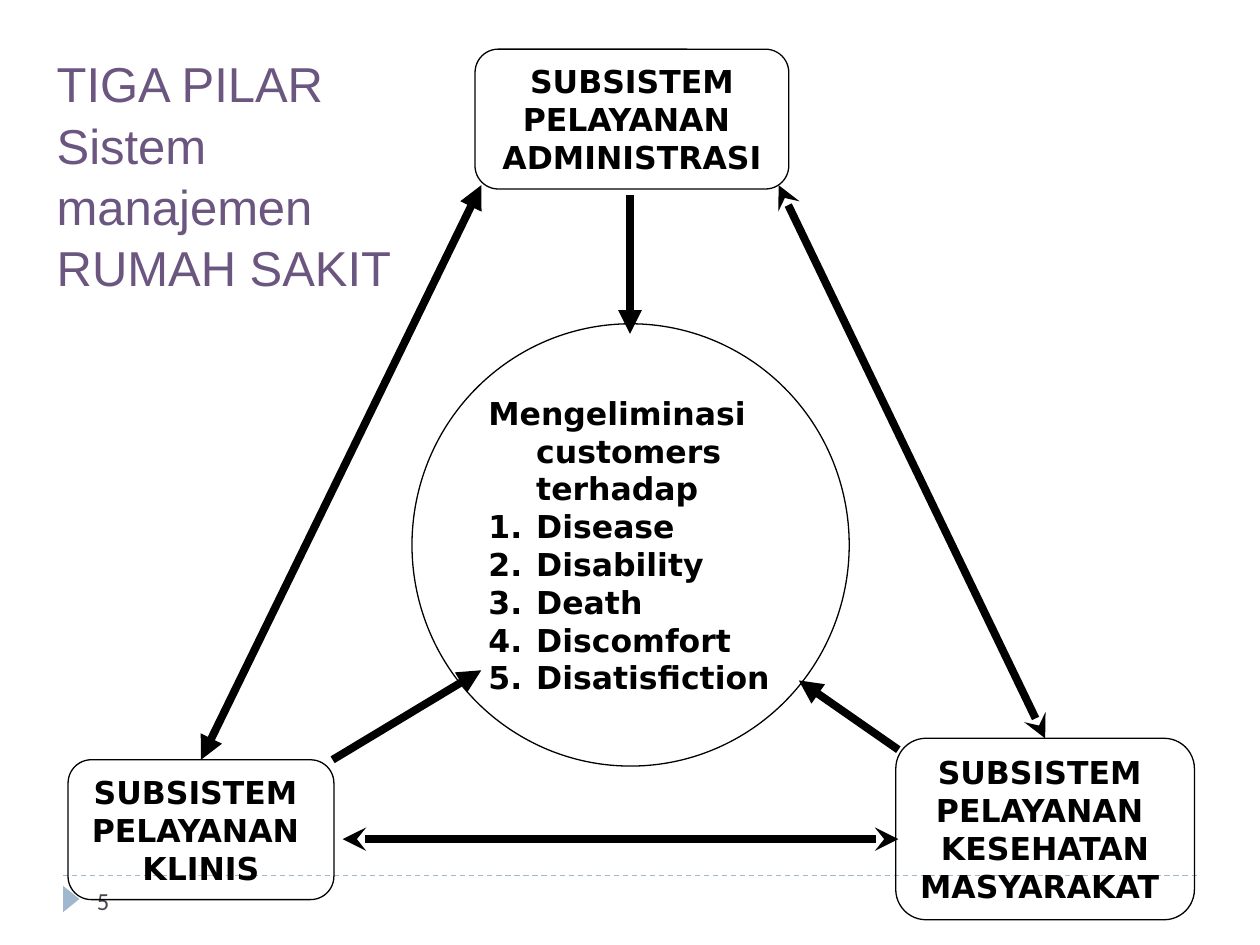
from lxml import etree
from pptx import Presentation
from pptx.dml.color import RGBColor
from pptx.enum import dml, shapes, text
from pptx.oxml import ns
from pptx.util import Inches, Pt

BLACK, PURPLE, BLUE, GREY = "000000", "6B5680", "9FB8CD", "464653"
BOLD = {"name": "DejaVu Sans", "size": Pt(18), "bold": True}
TOP, LEFT = 0, 1  # connection sites of a rectangle


def paint(color_format, color):
    color_format.rgb = RGBColor.from_string(color)


def add_xml(parent, tag, **attributes):
    return etree.SubElement(parent, ns.qn(tag), attributes)


def write(shape, paragraphs, font, color, align=text.PP_ALIGN.LEFT,
          anchor=text.MSO_ANCHOR.MIDDLE):
    """Fill a shape with paragraphs; \\v marks a line break."""
    frame = shape.text_frame
    frame.text = "\n".join(paragraphs)
    frame.word_wrap = False
    frame.auto_size = text.MSO_AUTO_SIZE.NONE
    frame.vertical_anchor = anchor
    for paragraph in frame.paragraphs:
        paragraph.alignment = align
        for name, value in font.items():
            setattr(paragraph.font, name, value)
        paint(paragraph.font.color, color)
    return frame


def add_outline(slide, kind, box):
    shape = slide.shapes.add_shape(kind, *map(Inches, box))
    shape.shadow.inherit = False
    shape.fill.background()
    paint(shape.line.color, BLACK)
    shape.line.width = Pt(0.75)
    return shape


def add_line(slide, start, end, color=BLACK, width=4.5, head=None, tail=None):
    line = slide.shapes.add_connector(
        shapes.MSO_CONNECTOR.STRAIGHT, *map(Inches, (*start, *end)))
    paint(line.line.color, color)
    line.line.width = Pt(width)
    outline = line.line._get_or_add_ln()
    for tag, arrow in (("a:headEnd", head), ("a:tailEnd", tail)):
        if arrow:
            add_xml(outline, tag, type=arrow)
    add_xml(line._element.spPr, "a:effectLst")
    return line


def add_title(slide, box):
    title = slide.shapes.title
    title.left, title.top, title.width, title.height = map(Inches, box)
    lines = ["TIGA PILAR", "Sistem", "manajemen", "RUMAH SAKIT"]
    frame = write(title, lines, {"name": "Arial", "size": Pt(28)}, PURPLE,
                  anchor=text.MSO_ANCHOR.TOP)
    for paragraph in frame.paragraphs:
        paragraph.line_spacing = 1.04


def add_footer(slide, box):
    left, top, width, height = box
    # Dashed rule
    rule = add_line(slide, (left, top), (left + width, top), BLUE, 0.75)
    rule.line.dash_style = dml.MSO_LINE.DASH
    # Page marker
    marker = slide.shapes.add_shape(
        shapes.MSO_SHAPE.ISOSCELES_TRIANGLE,
        Inches(left - 0.04), Inches(top + 0.12), Inches(0.21), Inches(0.13))
    marker.rotation = 90
    marker.shadow.inherit = False
    marker.fill.solid()
    paint(marker.fill.fore_color, BLUE)
    marker.line.fill.background()
    # Page number
    number = slide.shapes.add_textbox(
        Inches(left + 0.17), Inches(top), Inches(2.17), Inches(height))
    write(number, ["5"], {"name": "Calibri", "size": Pt(14)}, GREY)


def add_goal(slide, box):
    circle = add_outline(slide, shapes.MSO_SHAPE.OVAL, box)
    goals = ["Disease", "Disability", "Death", "Discomfort", "Disatisfiction"]
    frame = write(circle, ["Mengeliminasi \vcustomers \vterhadap", *goals],
                  BOLD, BLACK)
    indent = Inches(0.38)
    for index, paragraph in enumerate(frame.paragraphs):
        properties = paragraph._p.get_or_add_pPr()
        properties.set("marL", str(indent))
        properties.set("indent", str(-indent))
        if index:
            bullet = etree.Element(ns.qn("a:buAutoNum"), type="arabicPeriod")
            properties.find(ns.qn("a:defRPr")).addprevious(bullet)


def add_pillar(slide, box, label):
    pillar = add_outline(slide, shapes.MSO_SHAPE.ROUNDED_RECTANGLE, box)
    write(pillar, [label], BOLD, BLACK, text.PP_ALIGN.CENTER)
    return pillar


def add_arrows(slide, clinic, community):
    # Two-way arrows between the pillars
    both = {"head": "triangle", "tail": "triangle"}
    stealth = {"head": "stealth", "tail": "stealth"}
    left_side = add_line(slide, (1.6, 6.03), (3.82, 1.47), **both)
    left_side.begin_connect(clinic, TOP)
    right_side = add_line(slide, (6.18, 1.47), (8.3, 5.86), **stealth)
    right_side.end_connect(community, TOP)
    add_line(slide, (2.72, 6.66), (7.13, 6.66), **stealth)
    # One-way arrows into the circle
    for start, end in (((5, 1.55), (5, 2.65)),
                       ((2.64, 6.03), (3.82, 5.32)),
                       ((7.13, 5.95), (6.34, 5.4))):
        add_line(slide, start, end, tail="triangle")


def main():
    presentation = Presentation()
    presentation.slide_width, presentation.slide_height = Inches(10), Inches(7.5)
    slide = presentation.slides.add_slide(presentation.slide_layouts[5])
    add_title(slide, (0.35, 0.36, 2.92, 1.97))
    add_footer(slide, (0.5, 6.95, 9, 0.4))
    add_goal(slide, (3.27, 2.57, 3.47, 3.51))
    add_pillar(slide, (3.77, 0.39, 2.49, 1.11),
               "SUBSISTEM\vPELAYANAN \vADMINISTRASI")
    clinic = add_pillar(slide, (0.54, 6.03, 2.11, 1.11),
                        "SUBSISTEM \vPELAYANAN \vKLINIS")
    community = add_pillar(slide, (7.11, 5.86, 2.37, 1.44),
                           "SUBSISTEM \vPELAYANAN \vKESEHATAN\vMASYARAKAT ")
    add_arrows(slide, clinic, community)
    presentation.save("out.pptx")


if __name__ == "__main__":
    main()
